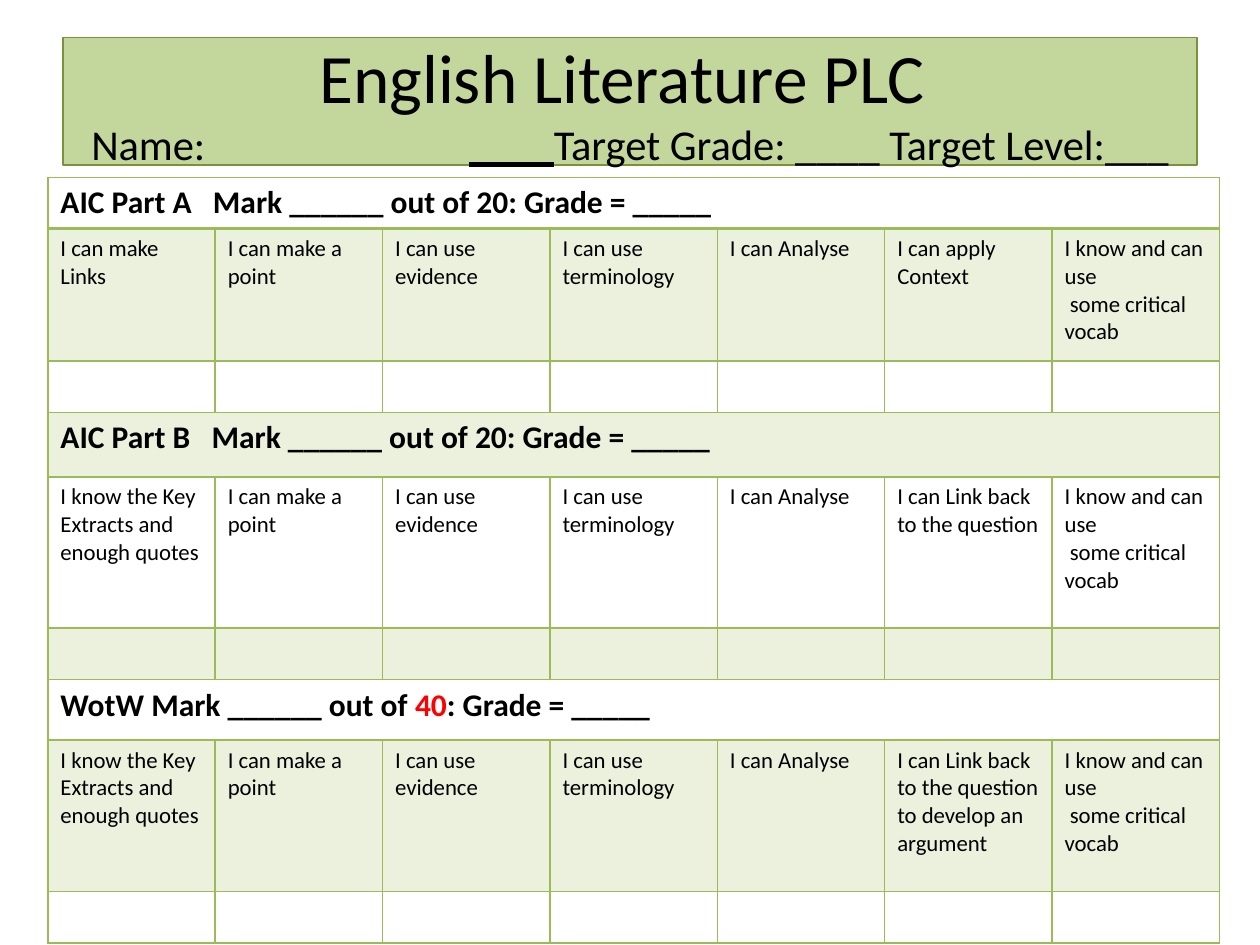
"""Build the English Literature PLC slide: a title banner over a progress table."""
import pptx
import pptx.util
import pptx.dml.color
import pptx.enum.shapes
import pptx.enum.text
from lxml import etree

Inches, Pt = pptx.util.Inches, pptx.util.Pt
RGB = pptx.dml.color.RGBColor.from_string

THEME = {
    "font": "Calibri", "text": "000000", "accent": "FF0000",
    "banner": "C3D69B", "banner_line": "77933C", "grid": "9BBB59", "tint": 20,
    "title": 39.6, "name": 24.3, "heading": 18, "skill": 13,
    "thin": 1, "thick": 2,
}

TITLE = "English Literature PLC "
NAME_LINE = [("Name: \t", False), ("____", True),
             ("Target Grade: ____ Target Level:___", False)]

POINT = ["I can make a point", "I can use evidence",
         "I can use terminology", "I can Analyse"]
VOCAB = "I know and can use\n some critical vocab"
QUOTES = "I know the Key Extracts and enough quotes"
SECTIONS = [
    {"heading": [("AIC Part A   Mark ______ out of 20: Grade = _____", "text")],
     "skills": ["I can make Links", *POINT, "I can apply Context", VOCAB],
     "heights": (0.4, 1.05, 0.41)},
    {"heading": [("AIC Part B   Mark ______ out of 20: Grade = _____", "text")],
     "skills": [QUOTES, *POINT, "I can Link back to the question", VOCAB],
     "heights": (0.51, 1.2, 0.41)},
    {"heading": [("WotW Mark ______ out of ", "text"), ("40", "accent"),
                 (": Grade = _____", "text")],
     "skills": [QUOTES, *POINT,
                "I can Link back to the question to develop an argument", VOCAB],
     "heights": (0.48, 1.2, 0.41)},
]

SLIDE_W, SLIDE_H = 10, 7.5
BANNER = (0.05 * SLIDE_W, 0.04 * SLIDE_H, 0.9 * SLIDE_W, 1.01)
TABLE_LEFT, TABLE_TOP, TABLE_W = 0.38, 1.41, 9.3
TAB_STOP = 3


def add_run(p, text, size, color="text", **formats):
    r = p.add_run()
    r.text = text
    values = {"name": THEME["font"], "size": Pt(THEME[size]), **formats}
    for key, value in values.items():
        setattr(r.font, key, value)
    r.font.color.rgb = RGB(THEME[color])


def add_xml(parent, tag, **attrs):
    node = etree.SubElement(parent, pptx.oxml.ns.qn(tag))
    for key, value in attrs.items():
        node.set(key, str(value))
    return node


def add_banner(s):
    sp = s.shapes.add_shape(pptx.enum.shapes.MSO_SHAPE.RECTANGLE,
                            *map(Inches, BANNER))
    sp.shadow.inherit = False
    sp.fill.solid()
    sp.fill.fore_color.rgb = RGB(THEME["banner"])
    sp.line.color.rgb = RGB(THEME["banner_line"])
    sp.line.width = Pt(0.75)
    tf = sp.text_frame
    for key, value in {"word_wrap": True,
                       "vertical_anchor": pptx.enum.text.MSO_ANCHOR.MIDDLE}.items():
        setattr(tf, key, value)
    title, name = tf.paragraphs[0], tf.add_paragraph()
    for p in (title, name):
        p.alignment = pptx.enum.text.PP_ALIGN.CENTER
    add_run(title, TITLE, "title")
    tabs = add_xml(name._p.get_or_add_pPr(), "a:tabLst")
    add_xml(tabs, "a:tab", pos=Inches(TAB_STOP), algn="l")
    for text, underline in NAME_LINE:
        add_run(name, text, "name", underline=underline)


def style_cell(cell, row):
    tcPr = cell._tc.get_or_add_tcPr()
    thick_side = {0: "B", 1: "T"}.get(row)
    for side in "LRTB":
        width = THEME["thick" if side == thick_side else "thin"]
        ln = add_xml(tcPr, f"a:ln{side}", w=Pt(width))
        add_xml(add_xml(ln, "a:solidFill"), "a:srgbClr", val=THEME["grid"])
    if row % 2:
        fill = add_xml(tcPr, "a:solidFill")
        color = add_xml(fill, "a:srgbClr", val=THEME["grid"])
        add_xml(color, "a:alpha", val=THEME["tint"] * 1000)
    else:
        cell.fill.background()


def add_progress_table(s):
    heights = [h for section in SECTIONS for h in section["heights"]]
    cols = len(SECTIONS[0]["skills"])
    table = s.shapes.add_table(len(heights), cols, *map(
        Inches, (TABLE_LEFT, TABLE_TOP, TABLE_W, sum(heights)))).table
    table.first_row = table.horz_banding = False
    for col in table.columns:
        col.width = Inches(TABLE_W / cols)
    for i, height in enumerate(heights):
        table.rows[i].height = Inches(height)
        for j in range(cols):
            style_cell(table.cell(i, j), i)
    for n, section in enumerate(SECTIONS):
        top = n * len(section["heights"])
        heading = table.cell(top, 0)
        heading.merge(table.cell(top, cols - 1))
        for text, color in section["heading"]:
            add_run(heading.text_frame.paragraphs[0], text, "heading", color, bold=True)
        for j, skill in enumerate(section["skills"]):
            tf = table.cell(top + 1, j).text_frame
            for k, line in enumerate(skill.split("\n")):
                p = tf.add_paragraph() if k else tf.paragraphs[0]
                add_run(p, line, "skill", bold=False)


def main():
    prs = pptx.Presentation()
    prs.slide_width, prs.slide_height = Inches(SLIDE_W), Inches(SLIDE_H)
    s = prs.slides.add_slide(prs.slide_layouts[6])
    add_banner(s)
    add_progress_table(s)
    prs.save("out.pptx")


if __name__ == "__main__":
    main()
